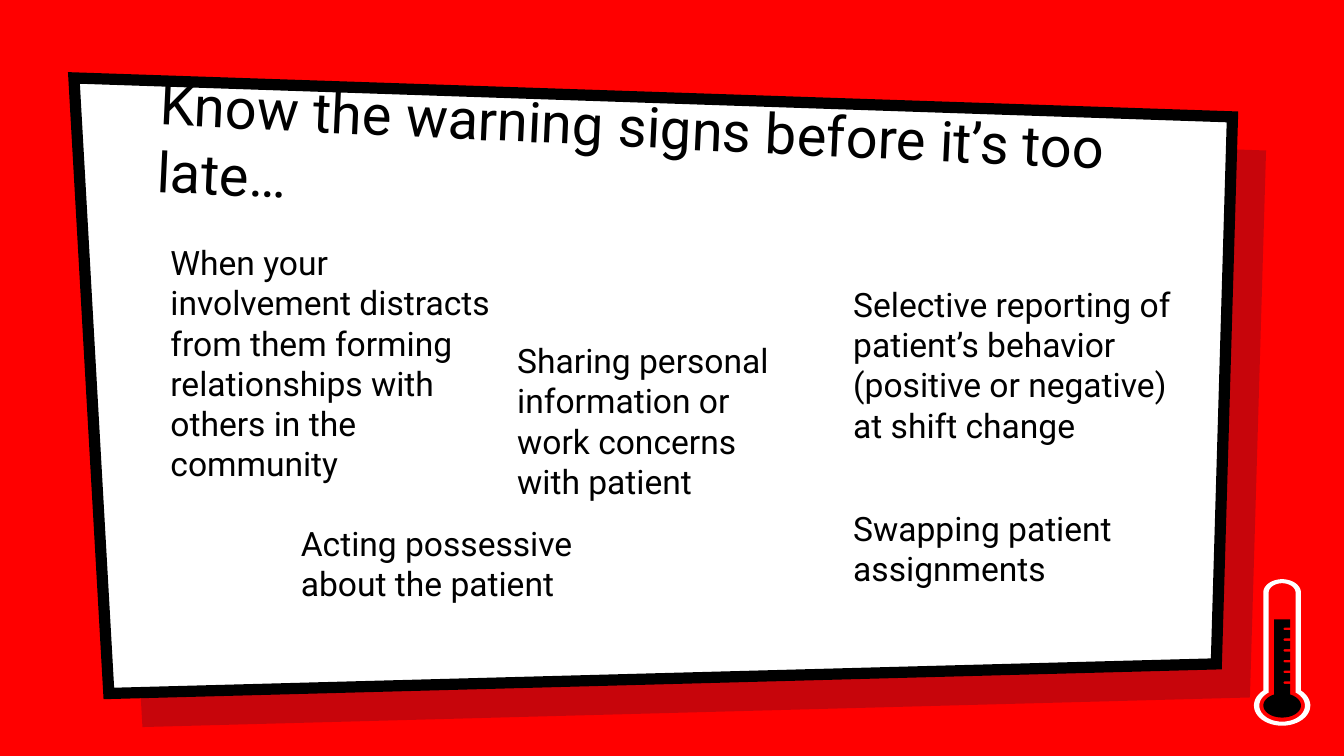
from math import acos, cos, pi, sin

from lxml import etree
from pptx import Presentation
from pptx.dml.color import RGBColor
from pptx.enum.text import MSO_ANCHOR, MSO_AUTO_SIZE
from pptx.oxml.ns import qn
from pptx.util import Inches, Pt

COLORS = {"red": "FF0000", "navy": "001936", "white": "FFFFFF", "black": "000000"}


def arc(cx, cy, rx, ry, start, end, steps=36):
    """Points along an ellipse, clockwise on the slide."""
    angles = [start + (end - start) * i / steps for i in range(steps + 1)]
    return [(cx + rx * cos(a), cy + ry * sin(a)) for a in angles]


def bulb(cx, cy, rx, ry, half_width):
    """The bulb from the right edge of its neck round to the left edge."""
    neck = acos(half_width / rx)
    return arc(cx, cy, rx, ry, -neck, pi + neck)


class WarningSlide:
    font = "Roboto"

    def __init__(self, presentation):
        self.slide = presentation.slides.add_slide(presentation.slide_layouts[6])
        self.slide.background.fill.solid()
        self.slide.background.fill.fore_color.rgb = self.color("red")

    def color(self, name):
        return RGBColor.from_string(COLORS[name])

    def outline(self, contours, fill, opacity=None, line=None):
        """Filled polygon; a second contour cuts a hole in the first."""
        contours = [[(Inches(x), Inches(y)) for x, y in points] for points in contours]
        builder = self.slide.shapes.build_freeform(*contours[0][0])
        for number, points in enumerate(contours):
            if number:
                builder.move_to(*points[0])
            builder.add_line_segments(points[1:], close=True)
        shape = builder.convert_to_shape()
        shape.shadow.inherit = False
        shape.fill.solid()
        shape.fill.fore_color.rgb = self.color(fill)
        if opacity:
            color = shape.fill._xPr.find(".//" + qn("a:srgbClr"))
            etree.SubElement(color, qn("a:alpha")).set("val", str(opacity * 1000))
        if line:
            shape.line.color.rgb = self.color("black")
            shape.line.width = Pt(line)
            miter = etree.SubElement(shape.line._get_or_add_ln(), qn("a:miter"))
            miter.set("lim", "800000")
        else:
            shape.line.fill.background()

    def text(self, words, left, top, width, height, size=18, inset=0.05,
             anchor=MSO_ANCHOR.TOP, rotation=0, grow=True):
        box = self.slide.shapes.add_textbox(
            Inches(left), Inches(top), Inches(width), Inches(height))
        box.rotation = rotation
        frame = box.text_frame
        frame.word_wrap = True
        frame.auto_size = MSO_AUTO_SIZE.SHAPE_TO_FIT_TEXT if grow else MSO_AUTO_SIZE.NONE
        frame.vertical_anchor = anchor
        frame.margin_top = frame.margin_bottom = Inches(inset)
        frame.text = words
        font = frame.paragraphs[0].runs[0].font
        font.name, font.size = self.font, Pt(size)
        font.color.rgb = self.color("black")

    def thermometer(self, cx, cy):
        # Glass: the outer edge and the hole inside it
        glass = []
        for half, cap_y, cap_ry, rx, ry in ((0.14, 4.41, 0.1, 0.21, 0.15),
                                            (0.1, 4.41, 0.07, 0.17, 0.12)):
            glass.append(arc(cx, cap_y, half, cap_ry, pi, 2 * pi)
                         + bulb(cx, cy, rx, ry, half))
        self.outline(glass, "white")

        # Mercury: flat top, scale notches down the right side
        half, top, notch = 0.06, 4.61, 0.01
        mercury = [(cx - half, top), (cx + half, top)]
        for i in range(6):
            y = 4.68 + 0.08 * i
            mercury.append((cx + half, y - notch))
            mercury += arc(cx + 0.02, y, notch, notch, -pi / 2, -3 * pi / 2, 8)
            mercury.append((cx + half, y + notch))
        self.outline([mercury + bulb(cx, cy, 0.14, 0.09, half)], "black")


def main():
    presentation = Presentation()
    # 16:9 page
    presentation.slide_width, presentation.slide_height = Inches(10), Inches(10 * 9 / 16)
    page = WarningSlide(presentation)

    # Tilted panel over its offset shadow
    panel = [(0.55, 0.58), (9.17, 0.87), (9.05, 4.94), (0.81, 5.16)]
    page.outline([[(x + 0.25, y + 0.25) for x, y in panel]], "navy", opacity=22)
    page.outline([panel], "white", line=6)

    # Title
    page.text("Know the warning signs before it’s too late…", 1.07, 0.96, 7.69, 0.83,
              size=30, inset=0.1, anchor=MSO_ANCHOR.BOTTOM, rotation=2.7, grow=False)

    # Warning signs
    page.text("Acting possessive about the patient", 2.14, 3.79, 2.73, 0.86,
              inset=0.1, grow=False)
    for sign, *place in (
        ("Sharing personal information or work concerns with patient",
         3.75, 2.48, 2.25, 1.31),
        ("Selective reporting of patient’s behavior (positive or negative) at shift change",
         6.25, 2.06, 2.67, 1.55),
        ("Swapping patient assignments", 6.25, 3.73, 2.42, 0.71),
        ("When your involvement distracts from them forming relationships with others "
         "in the community", 1.17, 1.75, 2.67, 1.92),
    ):
        page.text(sign, *place)

    page.thermometer(9.54, 5.25)
    presentation.save("out.pptx")


if __name__ == "__main__":
    main()
